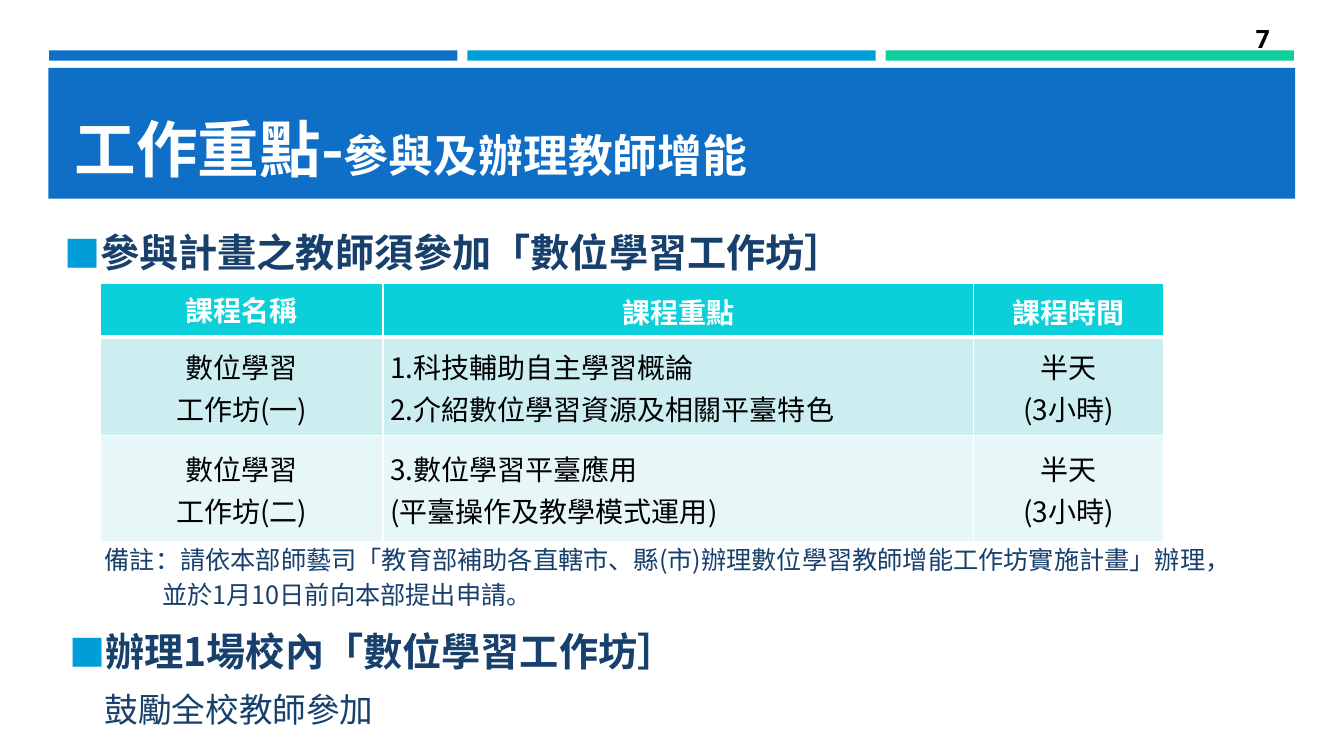
from lxml import etree
from pptx import Presentation
from pptx.dml.color import RGBColor
from pptx.enum.shapes import MSO_SHAPE as SHAPE
from pptx.enum.text import MSO_ANCHOR as ANCHOR, PP_ALIGN as ALIGN
from pptx.oxml.ns import qn
from pptx.util import Cm, Pt

# Content
COLORS = {
    "blue": "0F6FC6", "sky": "009DD9", "green": "10CF9B", "navy": "17406D",
    "head": "0BD0D9", "odd": "CCEEF1", "even": "E7F7F8",
    "white": "FFFFFF", "black": "000000",
}
SANS, MONO = "Noto Sans CJK SC", "Noto Sans Mono"
BARS = ["blue", "sky", "green"]
TITLE = [("工作重點-", 44), ("參與及辦理教師增能", 32)]
PAGE = "7"
JOIN = "參與計畫之教師須參加「數位學習工作坊］"
HOST = "辦理1場校內「數位學習工作坊］"
HOST_DETAIL = "鼓勵全校教師參加"
NOTE = [
    ("備註：請依本部師藝司「教育部補助各直轄市、縣(市)辦理數位學習教師增能工作坊實施計畫」辦理，", 0.89),
    ("並於1月10日前向本部提出申請。", 2.34),
]
COURSES = [
    ["課程名稱", "課程重點", "課程時間"],
    ["數位學習\n工作坊(一)", "1.科技輔助自主學習概論\n2.介紹數位學習資源及相關平臺特色", "半天\n(3小時)"],
    ["數位學習\n工作坊(二)", "3.數位學習平臺應用\n(平臺操作及教學模式運用)", "半天\n(3小時)"],
]
COL_WIDTHS = [7.11, 14.89, 4.78]
ROW_HEIGHTS = [1.35, 2.49, 2.67]
ROW_FILLS = ["head", "odd", "even"]

prs = Presentation()
prs.slide_width, prs.slide_height = Cm(33.87), Cm(19.05)
s = prs.slides.add_slide(prs.slide_layouts[6])


def rgb(name):
    return RGBColor.from_string(COLORS[name])


def add_rect(x, y, w, h, color):
    sp = s.shapes.add_shape(SHAPE.RECTANGLE, Cm(x), Cm(y), Cm(w), Cm(h))
    sp.shadow.inherit = False
    sp.fill.solid()
    sp.fill.fore_color.rgb = rgb(color)
    sp.line.fill.background()


def add_text(x, y, w, h, anchor=ANCHOR.MIDDLE):
    tf = s.shapes.add_textbox(Cm(x), Cm(y), Cm(w), Cm(h)).text_frame
    tf.word_wrap = True
    tf.vertical_anchor = anchor
    return tf


def style(p, size, color, bold=False, font=SANS):
    f = p.font
    f.name, f.size, f.bold = font, Pt(size), bold
    f.color.rgb = rgb(color)
    props = p._p.pPr.find(qn("a:defRPr"))
    etree.SubElement(props, qn("a:ea"), typeface=font)
    return props


def body(p, text, size, indent, bold=False):
    p.text = text
    p.space_before, p.space_after = Pt(size * 0.2), Pt(6)
    props = style(p, size, "navy", bold)
    p._p.pPr.set("marL", str(Cm(indent)))
    return props


def heading(p, text):
    props = body(p, text, 28, 0.84, True)
    p._p.pPr.set("indent", str(-Cm(0.84)))
    color = etree.Element(qn("a:buClr"))
    etree.SubElement(color, qn("a:srgbClr"), val=COLORS["sky"])
    props.addprevious(color)
    for tag, key, value in [("a:buSzPct", "val", "92000"),
                            ("a:buFont", "typeface", SANS),
                            ("a:buChar", "char", "■")]:
        props.addprevious(etree.Element(qn(tag), {key: value}))


def set_borders(cell, widths):
    tc_pr = cell._tc.get_or_add_tcPr()
    for i, (side, width) in enumerate(zip("LRTB", widths)):
        ln = etree.Element(qn("a:ln" + side), w=str(Pt(width)))
        fill = etree.SubElement(ln, qn("a:solidFill"))
        etree.SubElement(fill, qn("a:srgbClr"), val=COLORS["white"])
        tc_pr.insert(i, ln)


# Top bars and title band
for i, color in enumerate(BARS):
    add_rect(1.24 + i * 10.54, 1.27, 10.29, 0.26, color)
add_rect(1.22, 1.71, 31.42, 3.3, "blue")

# Title
p = add_text(1.63, 1.96, 30.63, 2.82, ANCHOR.BOTTOM).paragraphs[0]
style(p, 44, "white", True)
for text, size in TITLE:
    r = p.add_run()
    r.text, r.font.size = text, Pt(size)

# Page number
p = add_text(29.34, 0.46, 2.92, 1.02).paragraphs[0]
p.text, p.alignment = PAGE, ALIGN.RIGHT
style(p, 18, "black", True, MONO)

# First heading
heading(add_text(1.37, 5.54, 30.89, 1.6).paragraphs[0], JOIN)

# Course table
table = s.shapes.add_table(len(COURSES), len(COL_WIDTHS), Cm(2.54), Cm(7.14),
                           Cm(sum(COL_WIDTHS)), Cm(sum(ROW_HEIGHTS))).table
for column, width in zip(table.columns, COL_WIDTHS):
    column.width = Cm(width)
for row, height in zip(table.rows, ROW_HEIGHTS):
    row.height = Cm(height)
for i, row in enumerate(COURSES):
    for j, text in enumerate(row):
        cell = table.cell(i, j)
        cell.fill.solid()
        cell.fill.fore_color.rgb = rgb(ROW_FILLS[i])
        set_borders(cell, (1, 1, 3 if i == 1 else 1, 3 if i == 0 else 1))
        cell.vertical_anchor = ANCHOR.MIDDLE
        cell.margin_left = cell.margin_right = Cm(0.18)
        cell.margin_top = cell.margin_bottom = 0
        cell.text = text
        for p in cell.text_frame.paragraphs:
            p.alignment = ALIGN.LEFT if i and j == 1 else ALIGN.CENTER
            p.line_spacing = Pt(28 if i == j == 0 else 30)
            style(p, 20, "black" if i else "white", i == 0)

# Second heading and its detail
tf = add_text(1.5, 15.62, 30.89, 2.95)
heading(tf.paragraphs[0], HOST)
body(tf.add_paragraph(), HOST_DETAIL, 24, 0.89)

# Note under the table
tf = add_text(1.5, 13.16, 30.89, 2.95)
for i, (text, indent) in enumerate(NOTE):
    p = tf.add_paragraph() if i else tf.paragraphs[0]
    body(p, text, 18, indent)
    p.line_spacing = Pt(16)

prs.save("out.pptx")
